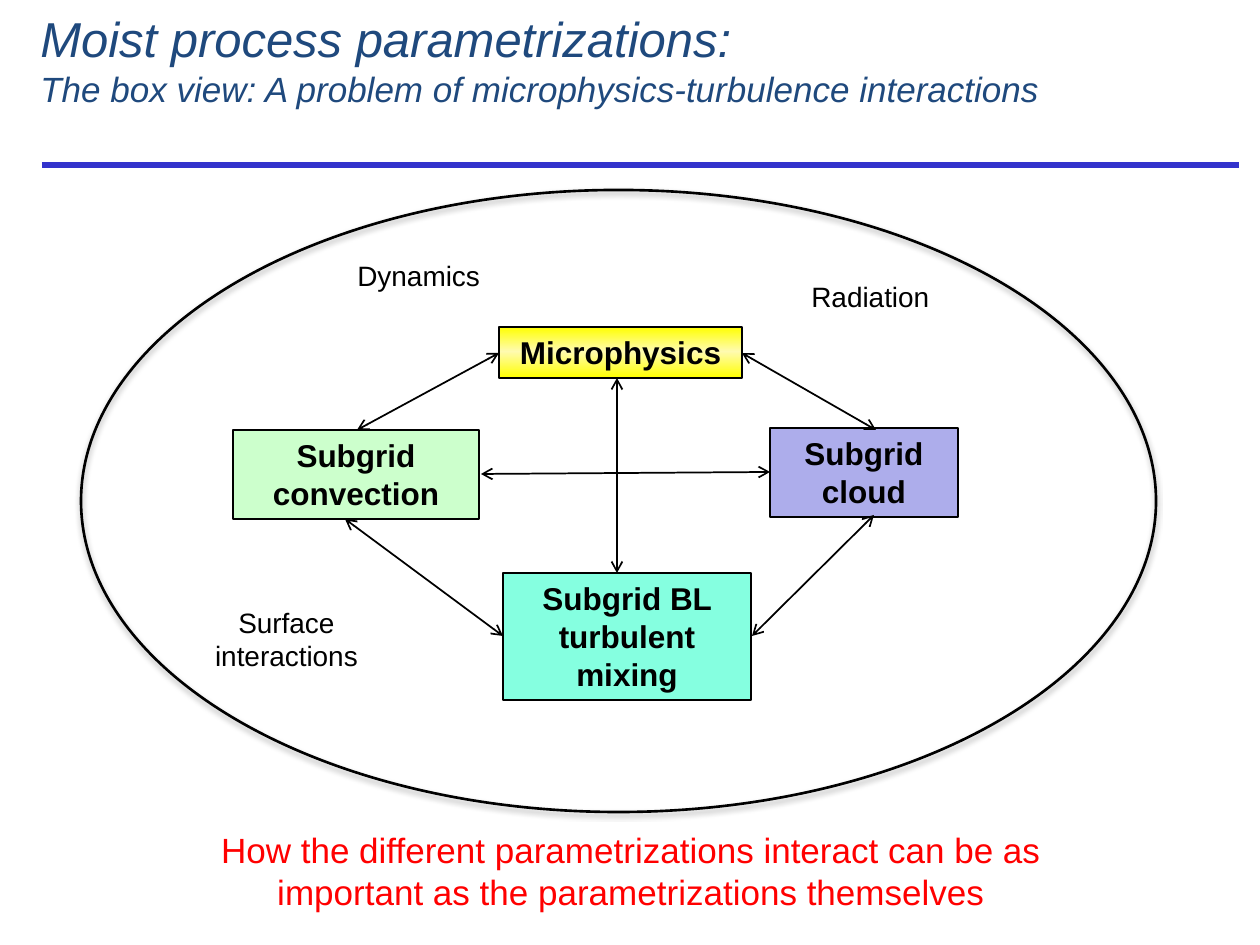
from lxml import etree
from pptx import Presentation
from pptx import util as u
from pptx.dml.color import RGBColor
from pptx.enum import shapes, text
from pptx.oxml import parse_xml
from pptx.oxml.ns import nsdecls, qn

SCALE = 914400 / 126  # EMU per px
FONT = "Arial"
COLORS = {
    "title": "1F497D", "rule": "3333CC", "ink": "000000", "caption": "FF0000",
    "mixing": "85FFE0", "convection": "CCFFCC", "cloud": "ADADEB",
    "micro": "FFFF00", "micro_mid": "FFFBB0",
}


def px(n):
    return u.Emu(round(n * SCALE))


def rgb(name):
    return RGBColor.from_string(COLORS[name])


def add_run(p, words, size, color, bold=False, italic=False):
    r = p.add_run()
    r.text = words
    f = r.font
    f.name, f.size, f.bold, f.italic = FONT, u.Pt(size), bold, italic
    f.color.rgb = rgb(color)


def add_text(s, x, y, w, h, words, size, color="ink", align=text.PP_ALIGN.LEFT):
    sp = s.shapes.add_textbox(px(x), px(y), px(w), px(h))
    tf = sp.text_frame
    tf.word_wrap = True
    p = tf.paragraphs[0]
    p.alignment = align
    add_run(p, words, size, color)


def add_line(s, x1, y1, x2, y2, color, width, arrows=False):
    c = s.shapes.add_connector(shapes.MSO_CONNECTOR.STRAIGHT, px(x1), px(y1), px(x2), px(y2))
    c.line.color.rgb = rgb(color)
    c.line.width = u.Pt(width)
    if arrows:
        ln = c.line._get_or_add_ln()
        for end in ("a:headEnd", "a:tailEnd"):
            etree.SubElement(ln, qn(end), type="arrow")
    etree.SubElement(c._element.spPr, qn("a:effectLst"))


def add_box(s, x, y, w, h, words, fill):
    sp = s.shapes.add_shape(shapes.MSO_SHAPE.RECTANGLE, px(x), px(y), px(w), px(h))
    sp.shadow.inherit = False
    sp.fill.solid()
    sp.fill.fore_color.rgb = rgb(fill)
    sp.line.color.rgb = rgb("ink")
    sp.line.width = u.Pt(1)
    tf = sp.text_frame
    tf.word_wrap = True
    tf.vertical_anchor = text.MSO_ANCHOR.TOP
    p = tf.paragraphs[0]
    p.alignment = text.PP_ALIGN.CENTER
    add_run(p, words, 18, "ink", bold=True)
    return sp


def set_gradient(sp, edge, middle):
    stops = "".join(
        f'<a:gs pos="{pos}"><a:srgbClr val="{COLORS[c]}"/></a:gs>'
        for pos, c in ((0, edge), (48000, middle), (100000, edge)))
    grad = parse_xml(f'<a:gradFill {nsdecls("a")} rotWithShape="1"><a:gsLst>{stops}</a:gsLst>'
                     '<a:lin ang="5400000" scaled="0"/></a:gradFill>')
    spPr = sp._element.spPr
    spPr.replace(spPr.find(qn("a:solidFill")), grad)


def set_shadow(sp):
    sp.shadow.inherit = False
    sp._element.spPr.find(qn("a:effectLst")).append(parse_xml(
        f'<a:outerShdw {nsdecls("a")} blurRad="40000" dist="23000" dir="5400000" rotWithShape="0">'
        f'<a:srgbClr val="{COLORS["ink"]}"><a:alpha val="35000"/></a:srgbClr></a:outerShdw>'))


def header(s, x, y, w, h):
    # Rule under the title
    add_line(s, x + 14, y + 145, x + 1211, y + 145, "rule", 3)
    # Title and subtitle
    sp = s.shapes.add_textbox(px(x), px(y), px(w), px(h))
    tf = sp.text_frame
    tf.word_wrap = True
    tf.vertical_anchor = text.MSO_ANCHOR.MIDDLE
    p = tf.paragraphs[0]
    add_run(p, "Moist process parametrizations:", 28, "title", italic=True)
    p.add_line_break()
    add_run(p, "The box view: A problem of microphysics-turbulence interactions",
            20, "title", italic=True)


def diagram(s, x, y, w, h):
    # Process boxes
    for bx, by, bw, bh, words, fill in (
        (422, 383, 248, 127, "Subgrid BL turbulent mixing", "mixing"),
        (152, 240, 246, 89, "Subgrid convection", "convection"),
        (689, 238, 188, 89, "Subgrid cloud", "cloud"),
    ):
        add_box(s, x + bx, y + by, bw, bh, words, fill)
    micro = add_box(s, x + 418, y + 137, 243, 51, "Microphysics", "micro")
    set_gradient(micro, "micro", "micro_mid")

    # Two-way interactions
    for x1, y1, x2, y2 in (
        (536, 188, 536, 383),  # microphysics - mixing
        (400, 284, 689, 282),  # convection - cloud
        (276, 240, 418, 163),  # convection - microphysics
        (264, 329, 422, 446),  # convection - mixing
        (793, 325, 671, 446),  # cloud - mixing
        (661, 163, 795, 240),  # microphysics - cloud
    ):
        add_line(s, x + x1, y + y1, x + x2, y + y2, "ink", 1, arrows=True)

    # Enclosing ellipse
    sp = s.shapes.add_shape(shapes.MSO_SHAPE.OVAL, px(x), px(y), px(w), px(h))
    sp.fill.background()
    sp.line.color.rgb = rgb("ink")
    sp.line.width = u.Pt(1.5)
    set_shadow(sp)

    # Surrounding processes
    add_text(s, x + 264, y + 62, 249, 47, "Dynamics", 16)
    add_text(s, x + 718, y + 83, 249, 47, "Radiation", 16)
    add_text(s, x + 104, y + 409, 203, 81, "Surface interactions", 16,
             align=text.PP_ALIGN.CENTER)


def caption(s, x, y, w, h):
    add_text(s, x, y, w, h, "How the different parametrizations interact can be as "
             "important as the parametrizations themselves", 20, "caption", text.PP_ALIGN.CENTER)


def main():
    prs = Presentation()
    prs.slide_width, prs.slide_height = px(1260), px(945)
    s = prs.slides.add_slide(prs.slide_layouts[6])
    header(s, 28, 20, 1221, 78)
    diagram(s, 81, 190, 1075, 622)
    caption(s, 188, 822, 886, 97)
    prs.save("out.pptx")


if __name__ == "__main__":
    main()
